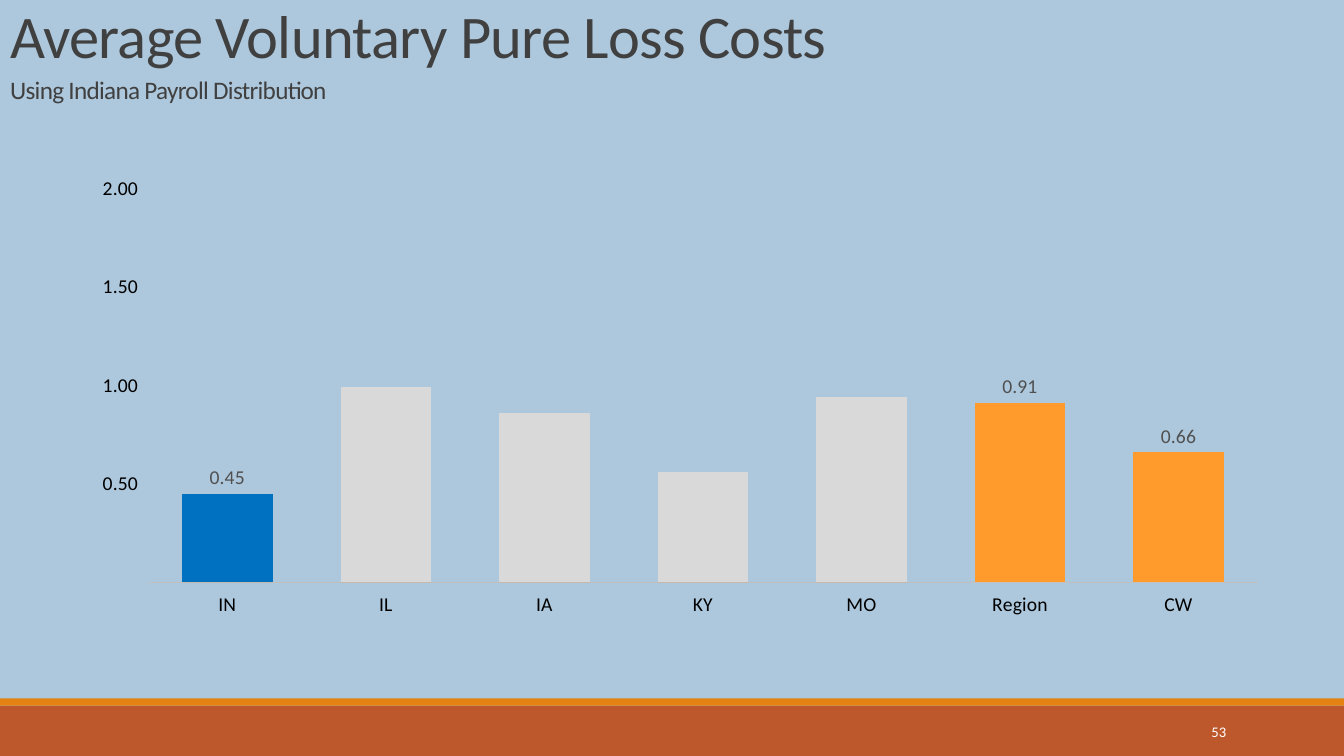
from lxml import etree
from pptx import Presentation
from pptx.chart.data import CategoryChartData
from pptx.dml.color import RGBColor
from pptx.enum.chart import XL_CHART_TYPE as ChartType, XL_LABEL_POSITION as LabelPos
from pptx.enum.chart import XL_TICK_LABEL_POSITION as TickLabels, XL_TICK_MARK as TickMark
from pptx.enum.shapes import MSO_SHAPE as Preset
from pptx.enum.text import MSO_ANCHOR as Anchor, MSO_AUTO_SIZE as AutoSize, PP_ALIGN as Align
from pptx.oxml import parse_xml
from pptx.oxml.ns import nsdecls
from pptx.util import Inches, Pt

COLORS = {
    "background": "ADC8DD", "footer": "BD582C", "stripe": "E48312",
    "title": "404040", "white": "FFFFFF", "axis": "000000", "baseline": "BFBFBF",
    "label": "505050", "indiana": "0070C0", "states": "D9D9D9", "totals": "FF9B2D",
}
HIDE_ZERO = '0.00;;""'
STATES = ["IN", "IL", "IA", "KY", "MO", "Region", "CW"]
LOSS_COSTS = [
    ("Series 1", [0.45] + [None] * 6, "indiana", True),
    ("Series 2", [None, 0.99, 0.86, 0.56, 0.94, 0, 0], "states", False),
    ("Series 3", [0] * 5 + [0.91, 0.66], "totals", True),
]
PLOT_AREA = {"x": 0.068, "y": 0.026, "w": 0.915, "h": 0.865}


class LossCostSlide:
    """Holds the style and the slide, and adds each kind of element."""

    def __init__(self, deck):
        self.slide = deck.slides.add_slide(deck.slide_layouts[5])
        self.fill(self.slide.background.fill, "background")

    def fill(self, target, color):
        target.solid()
        target.fore_color.rgb = RGBColor.from_string(COLORS[color])

    def style(self, font, size, color):
        font.name = "Calibri"
        font.size = Pt(size)
        font.color.rgb = RGBColor.from_string(COLORS[color])

    def band(self, top, height, color):
        band = self.slide.shapes.add_shape(
            Preset.RECTANGLE, 0, Inches(top), Inches(13.33), Inches(height))
        band.shadow.inherit = False
        self.fill(band.fill, color)
        band.line.fill.background()

    def title(self, lines):
        title = self.slide.shapes.title
        title.left, title.top = Inches(0), Inches(0)
        title.width, title.height = Inches(11.89), Inches(1.09)
        frame = title.text_frame
        frame.auto_size = AutoSize.NONE
        frame.word_wrap = True
        frame.vertical_anchor = Anchor.BOTTOM
        frame.text = "\n".join(text for text, _, _ in lines)
        for paragraph, (_, size, gap) in zip(frame.paragraphs, lines):
            paragraph.alignment = Align.LEFT
            paragraph.line_spacing = 0.85
            paragraph.space_before = Pt(gap)
            self.style(paragraph.font, size, "title")
            paragraph.runs[0]._r.get_or_add_rPr().set("spc", "-50")

    def page_number(self, number):
        box = self.slide.shapes.add_textbox(
            Inches(10.83), Inches(7.06), Inches(1.43), Inches(0.4))
        frame = box.text_frame
        frame.word_wrap = True
        frame.vertical_anchor = Anchor.MIDDLE
        frame.text = number
        paragraph = frame.paragraphs[0]
        paragraph.alignment = Align.RIGHT
        paragraph.line_spacing = Pt(12.4)
        self.style(paragraph.font, 10.5, "white")

    def column_chart(self, categories, series_rows):
        data = CategoryChartData(number_format="0.00")
        data.categories = categories
        for name, values, _, _ in series_rows:
            data.add_series(name, values)
        chart = self.slide.shapes.add_chart(
            ChartType.COLUMN_CLUSTERED, Inches(0.65), Inches(1.75),
            Inches(12.03), Inches(4.52), data).chart
        chart.has_legend = False
        chart.has_title = False
        self.style(chart.font, 14, "axis")
        plot = chart.plots[0]
        plot.gap_width, plot.overlap, plot.vary_by_categories = 75, 100, False
        for series, (_, _, color, labelled) in zip(plot.series, series_rows):
            self.fill(series.format.fill, color)
            series.invert_if_negative = False
            if labelled:
                labels = series.data_labels
                labels.show_value = True
                labels.position = LabelPos.OUTSIDE_END
                labels.number_format = HIDE_ZERO
                labels.number_format_is_linked = False
                self.style(labels.font, 14, "label")
        self.axes(chart)
        self.plot_layout(chart)

    def axes(self, chart):
        states, costs = chart.category_axis, chart.value_axis
        for axis in (states, costs):
            axis.has_major_gridlines = False
            self.style(axis.tick_labels.font, 14, "axis")
        states.major_tick_mark = TickMark.NONE
        states.tick_label_position = TickLabels.LOW
        states.format.line.width = Pt(1)
        self.fill(states.format.line.fill, "baseline")
        costs.minimum_scale, costs.maximum_scale, costs.major_unit = 0, 2, 0.5
        costs.tick_labels.number_format = HIDE_ZERO
        costs.tick_labels.number_format_is_linked = False
        costs.format.line.fill.background()

    def plot_layout(self, chart):
        plot_area = chart._chartSpace.chart.plotArea
        for old in plot_area.xpath("c:layout"):
            plot_area.remove(old)
        layout = parse_xml(
            f'<c:layout {nsdecls("c")}><c:manualLayout><c:layoutTarget val="inner"/>'
            '<c:xMode val="edge"/><c:yMode val="edge"/></c:manualLayout></c:layout>')
        namespace = layout.nsmap["c"]
        for side, share in PLOT_AREA.items():
            etree.SubElement(layout[0], f"{{{namespace}}}{side}").set("val", str(share))
        plot_area.insert(0, layout)


def main():
    deck = Presentation()
    deck.slide_width, deck.slide_height = Inches(13.33), Inches(7.5)
    slide = LossCostSlide(deck)
    slide.band(7, 0.5, "footer")
    slide.band(6.93, 0.07, "stripe")
    slide.page_number("53")
    slide.title([("Average Voluntary Pure Loss Costs", 43.2, 0),
                 ("Using Indiana Payroll Distribution", 18, 6)])
    slide.column_chart(STATES, LOSS_COSTS)
    deck.save("out.pptx")


if __name__ == "__main__":
    main()
